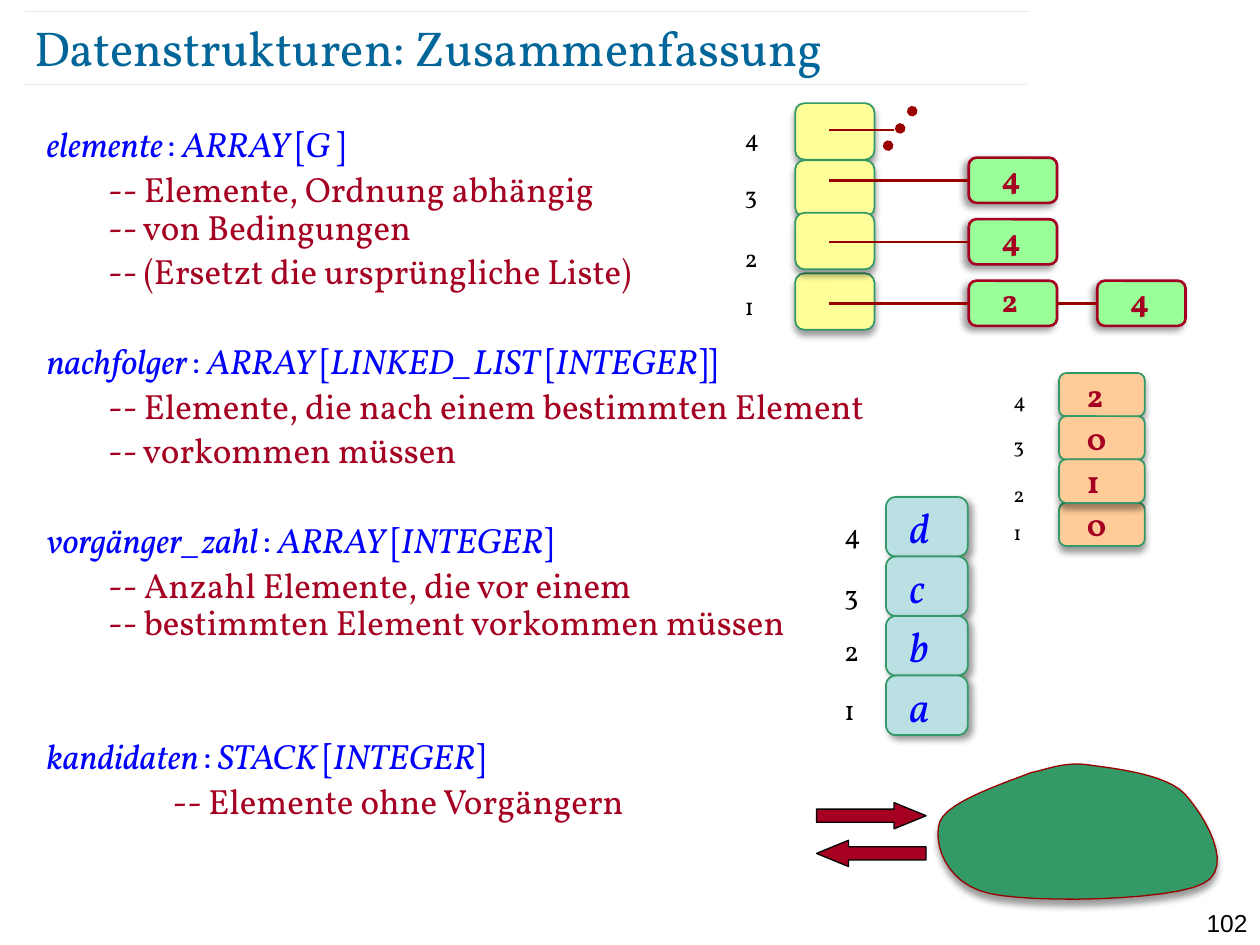
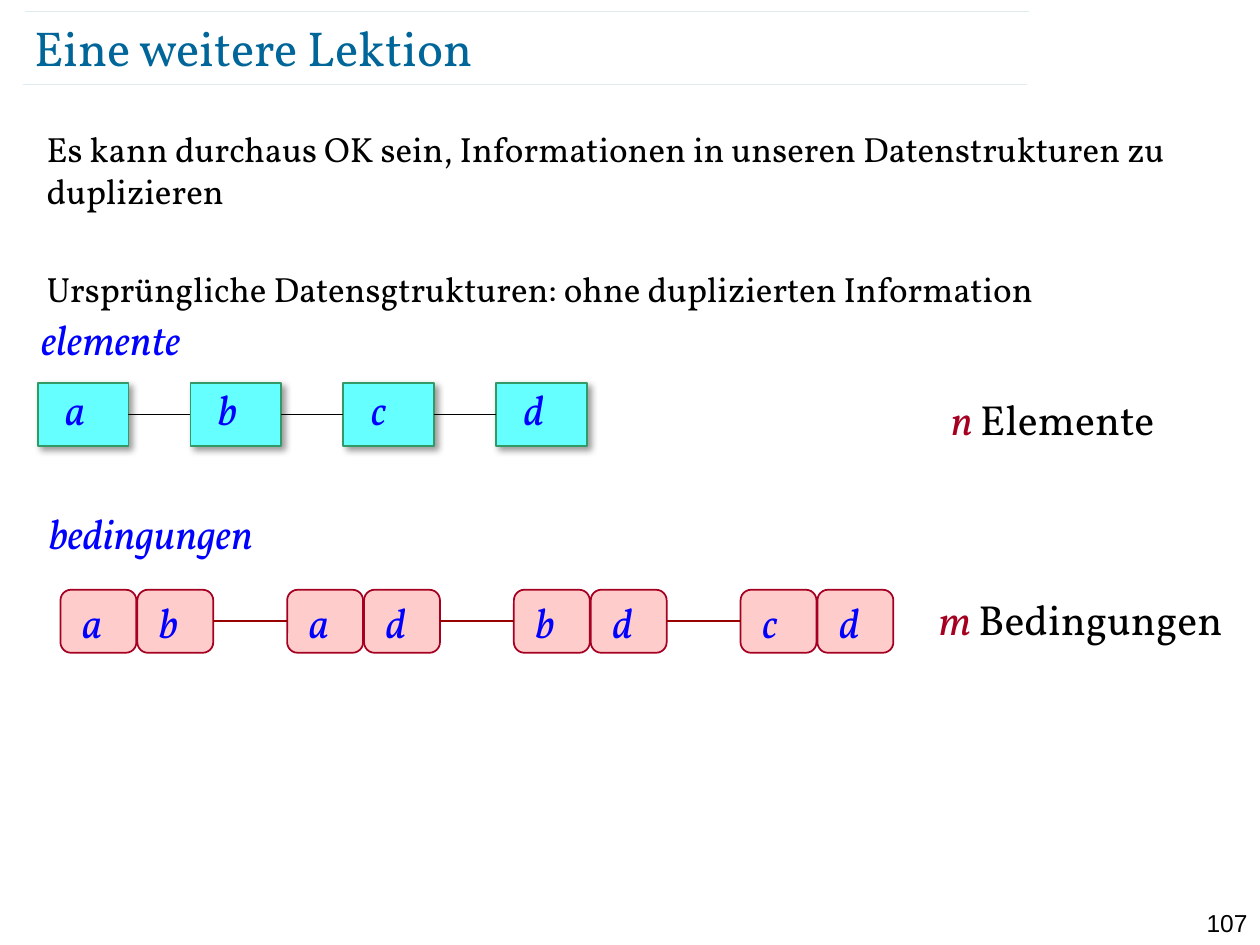
from itertools import groupby, pairwise

from lxml.etree import SubElement
from pptx import Presentation
from pptx.dml.color import RGBColor
from pptx.enum.dml import MSO_LINE
from pptx.enum.shapes import MSO_CONNECTOR, MSO_SHAPE
from pptx.enum.text import MSO_ANCHOR, MSO_AUTO_SIZE, PP_ALIGN
from pptx.oxml.ns import qn
from pptx.util import Cm, Pt

# Shared style
FONT = "Vollkorn"
BLACK, TEAL, BLUE, RED = "000000", "006699", "0000FF", "A50021"
DARK_RED, GREEN = "990000", "339966"
RULES = [(0.46, 1.7), (0.51, 0.23)]  # left, top
RULE_WIDTH = 20.24

# Slide 1: attribute name, type, indent of its comments, space before, comments
DECLARATIONS = [
    ("elemente", "ARRAY [G ]", 1.24, 0,
     [["-- Elemente, Ordnung abhängig", "-- von Bedingungen"],
      ["-- (Ersetzt die ursprüngliche Liste)"]]),
    ("nachfolger", "ARRAY [LINKED_LIST [INTEGER]]", 1.24, 29.5,
     [["-- Elemente, die nach einem bestimmten Element"],
      ["-- vorkommen müssen"]]),
    ("vorgänger_zahl", "ARRAY [INTEGER]", 1.24, 29.5,
     [["-- Anzahl Elemente, die vor einem",
       "-- bestimmten Element vorkommen müssen"]]),
    ("kandidaten", "STACK [INTEGER]", 2.54, 55,
     [["-- Elemente ohne Vorgängern"]]),
]

# Arrays, rows from back to front: index, value, cell top, index top
ARRAYS = [
    dict(left=16.03, size=(1.6, 1.14), fill="FFFF99", shadow=90,
         index_left=14.76, index_size=14, value_style={}, inset=0,
         rows=[("1", "", 5.51, 5.74), ("4", "", 2.08, 2.36),
               ("3", "", 3.23, 3.51), ("2", "", 4.29, 4.78)]),
    dict(left=21.35, size=(1.73, 0.88), fill="FFCC99", shadow=90,
         index_left=20.18, index_size=12, inset=0.52,
         value_style=dict(size=18, color=RED, bold=True),
         rows=[("1", "0", 10.13, 10.34), ("4", "2", 7.52, 7.68),
               ("3", "0", 8.39, 8.59), ("2", "1", 9.26, 9.58)]),
    dict(left=17.86, size=(1.65, 1.2), fill="BBE0E3", shadow=45,
         index_left=16.77, index_size=16, inset=0.42,
         value_style=dict(size=24, color=BLUE, italic=True),
         rows=[("4", "d", 10.02, 10.29), ("3", "c", 11.22, 11.51),
               ("2", "b", 12.42, 12.65), ("1", "a", 13.62, 13.84)]),
]

# Linked lists that hang on the first array: top, values
SUCCESSORS = [(3.18, ["4"]), (4.42, ["4"]), (5.66, ["2", "4"])]

# Candidate pool: start, then control, control and end point of each curve
POOL_START = (20.8, 15.57)
POOL_CURVES = [
    ((20.35, 15.75), (19.1, 16.15), (18.95, 16.56)),
    ((18.8, 16.97), (19.05, 17.81), (19.94, 18.01)),
    ((20.8, 18.21), (23.6, 18.16), (24.26, 17.81)),
    ((24.92, 17.48), (24.26, 16.41), (23.88, 16)),
    ((23.5, 15.6), (22.45, 15.49), (21.95, 15.42)),
    ((21.44, 15.34), (21.03, 15.54), (20.8, 15.57)),
]

# Slide 2
LESSON = [
    "Es kann durchaus OK sein, Informationen in unseren Datenstrukturen "
    "zu duplizieren",
    "Ursprüngliche Datensgtrukturen: ohne duplizierten Information",
]
ELEMENTS = "abcd"
CONSTRAINTS = ["ab", "ad", "bd", "cd"]
NAMES = [("elemente", 0.58, 6.2), ("bedingungen", 0.74, 10.11)]
COUNTS = [("n ", "Elemente", 18.92, 7.8), ("m ", "Bedingungen", 18.67, 11.84)]


def rgb(value):
    return RGBColor.from_string(value)


def add_span(para, text, size, color=BLACK, bold=False, italic=False, font=FONT):
    span = para.add_run()
    span.text = text
    span.font.name = font
    span.font.size = Pt(size)
    span.font.bold = bold
    span.font.italic = italic
    span.font.color.rgb = rgb(color)


def add_box(page, left, top, width, height):
    box = page.shapes.add_textbox(Cm(left), Cm(top), Cm(width), Cm(height))
    box.text_frame.word_wrap = True
    return box.text_frame


def next_para(frame, first):
    return frame.paragraphs[0] if first else frame.add_paragraph()


def add_effects(shape, shadow=None):
    """Leave the effect list empty, or cast a soft shadow in a direction."""
    properties = shape._element.spPr
    for old in properties.findall(qn("a:effectLst")):
        properties.remove(old)
    effects = SubElement(properties, qn("a:effectLst"))
    if shadow is not None:
        outer = SubElement(effects, qn("a:outerShdw"), blurRad=str(Pt(4)),
                           dist=str(Pt(3)), dir=str(shadow * 60000), algn="ctr",
                           rotWithShape="0")
        color = SubElement(outer, qn("a:srgbClr"), val=BLACK)
        SubElement(color, qn("a:alpha"), val="40000")


def paint(shape, fill, line, width, shadow=None):
    shape.fill.solid()
    shape.fill.fore_color.rgb = rgb(fill)
    shape.line.color.rgb = rgb(line)
    shape.line.width = Pt(width)
    add_effects(shape, shadow)


def add_cell(page, kind, place, fill, line, width=1, shadow=None,
             text="", inset=0, lift=0, **style):
    cell = page.shapes.add_shape(kind, *map(Cm, place))
    paint(cell, fill, line, width, shadow)
    if text:
        frame = cell.text_frame
        frame.word_wrap = True
        frame.vertical_anchor = MSO_ANCHOR.MIDDLE
        frame.margin_left, frame.margin_bottom = Cm(inset), Cm(lift)
        frame.margin_top = frame.margin_right = 0
        frame.paragraphs[0].alignment = PP_ALIGN.LEFT
        add_span(frame.paragraphs[0], text, **style)
    return cell


def add_line(page, start, end, color, width):
    line = page.shapes.add_connector(MSO_CONNECTOR.STRAIGHT,
                                     *map(Cm, start + end))
    line.line.color.rgb = rgb(color)
    line.line.width = Pt(width)
    add_effects(line)
    return line


def link(page, source, target, color, width):
    line = add_line(page, (0, 0), (1, 1), color, width)
    line.begin_connect(source, 3)
    line.end_connect(target, 1)


def add_page(deck, title, number):
    page = deck.slides.add_slide(deck.slide_layouts[5])
    for left, top in RULES:
        rule = add_line(page, (left, top), (left + RULE_WIDTH, top), TEAL, 0.1)
        color = rule._element.spPr.find(".//" + qn("a:srgbClr"))
        SubElement(color, qn("a:alpha"), val="35000")

    heading = page.shapes.title
    heading.left, heading.top = Cm(0.69), Cm(0.33)
    heading.width, heading.height = Cm(22.07), Cm(1.22)
    frame = heading.text_frame
    frame.auto_size = MSO_AUTO_SIZE.NONE
    frame.vertical_anchor = MSO_ANCHOR.MIDDLE
    frame.margin_left = frame.margin_right = 0
    frame.margin_top = frame.margin_bottom = 0
    frame.paragraphs[0].alignment = PP_ALIGN.LEFT
    add_span(frame.paragraphs[0], title, 28, TEAL)

    para = add_box(page, 24, 18.19, 1.4, 0.61).paragraphs[0]
    para.alignment = PP_ALIGN.RIGHT
    add_span(para, number, 14, font="Arial")
    return page


def add_body(page):
    return add_box(page, 0.69, 2.44, 23.88, 15.67)


def add_declarations(page):
    frame = add_body(page)
    for number, (name, kind, indent, before, comments) in enumerate(DECLARATIONS):
        para = next_para(frame, number == 0)
        para.line_spacing = 0.9
        para.space_before = Pt(before)
        add_span(para, name, 20, BLUE, italic=True)
        add_span(para, " ", 14, BLUE, italic=True)
        add_span(para, ":", 20, BLUE)
        for bracket, letters in groupby(" " + kind, lambda sign: sign in "[]"):
            add_span(para, "".join(letters), 20, BLUE, italic=not bracket)
        for lines in comments:
            para = frame.add_paragraph()
            para.line_spacing = 0.9
            para.space_before = Pt(4)
            para._p.get_or_add_pPr().set("marL", str(Cm(indent)))
            for position, text in enumerate(lines):
                if position:
                    para.add_line_break()
                add_span(para, text, 20, RED)


def add_array(page, array):
    for index, value, top, index_top in array["rows"]:
        add_cell(page, MSO_SHAPE.ROUNDED_RECTANGLE,
                 (array["left"], top, *array["size"]), array["fill"], GREEN,
                 shadow=array["shadow"], text=value, inset=array["inset"],
                 **array["value_style"])
        frame = add_box(page, array["index_left"], index_top, 1.2, 0.85)
        add_span(frame.paragraphs[0], index, array["index_size"])


def add_successors(page):
    start, left, pitch, width, height = 16.71, 19.53, 2.59, 1.78, 0.91
    for top, values in SUCCESSORS:
        cells = [add_cell(page, MSO_SHAPE.ROUNDED_RECTANGLE,
                          (left + pitch * column, top, width, height),
                          "99FF99", RED, 1.5, 135, value, 0.62, 0.12,
                          size=18, color=RED, bold=True)
                 for column, value in enumerate(values)]
        middle = top + height / 2
        line = add_line(page, (start, middle), (left, middle), DARK_RED, 1.5)
        line.end_connect(cells[0], 1)
        for source, target in pairwise(cells):
            link(page, source, target, DARK_RED, 1.5)
    # The list of the fourth element goes on
    add_line(page, (start, 2.62), (18.03, 2.62), DARK_RED, 1.5)
    dots = add_line(page, (18.39, 2.24), (17.81, 3.07), DARK_RED, 6)
    dots.line.dash_style = MSO_LINE.ROUND_DOT
    dots._element.spPr.find(qn("a:ln")).set("cap", "rnd")


def add_pool(page, steps=12):
    points, start = [], POOL_START
    for first, second, end in POOL_CURVES:
        for step in range(1, steps + 1):
            t = step / steps
            points.append(tuple(
                Cm((1 - t) ** 3 * a + 3 * (1 - t) ** 2 * t * b
                   + 3 * (1 - t) * t ** 2 * c + t ** 3 * d)
                for a, b, c, d in zip(start, first, second, end)))
        start = end
    builder = page.shapes.build_freeform(*map(Cm, POOL_START))
    builder.add_line_segments(points, close=True)
    paint(builder.convert_to_shape(), GREEN, DARK_RED, 0.75, 90)
    for kind, top in [(MSO_SHAPE.RIGHT_ARROW, 16.18), (MSO_SHAPE.LEFT_ARROW, 16.94)]:
        arrow = add_cell(page, kind, (16.46, top, 2.21, 0.53), RED, BLACK, 0.75)
        arrow.adjustments[1] = 1.22


def add_elements(page):
    cells = [add_cell(page, MSO_SHAPE.RECTANGLE,
                      (0.76 + 3.08 * column, 7.72, 1.83, 1.27),
                      "66FFFF", GREEN, 1, 45, letter, 0.56, 0.22,
                      size=24, color=BLUE, italic=True)
             for column, letter in enumerate(ELEMENTS)]
    for source, target in pairwise(cells):
        link(page, source, target, BLACK, 0.75)


def add_constraints(page):
    pairs = [[add_cell(page, MSO_SHAPE.ROUNDED_RECTANGLE,
                       (1.22 + 4.57 * column + 1.55 * half, 11.89, 1.53, 1.27),
                       "FFCCCC", RED, text=letter, inset=0.38,
                       size=24, color=BLUE, italic=True)
              for half, letter in enumerate(pair)]
             for column, pair in enumerate(CONSTRAINTS)]
    for source, target in pairwise(pairs):
        link(page, source[1], target[0], DARK_RED, 1)


def main():
    deck = Presentation()
    deck.slide_width, deck.slide_height = Cm(25.4), Cm(19.05)

    # Slide 1: the data structures
    page = add_page(deck, "Datenstrukturen: Zusammenfassung", "102")
    add_declarations(page)
    for array in ARRAYS:
        add_array(page, array)
    add_successors(page)
    add_pool(page)

    # Slide 2: structures without duplicated information
    page = add_page(deck, "Eine weitere Lektion", "107")
    frame = add_body(page)
    for number, text in enumerate(LESSON):
        para = next_para(frame, number == 0)
        para.space_before = Pt(32 * number)
        add_span(para, text, 20)
    add_elements(page)
    add_constraints(page)
    for name, left, top in NAMES:
        para = add_box(page, left, top, 5.56, 1.27).paragraphs[0]
        add_span(para, name, 24, BLUE, italic=True)
    for symbol, noun, left, top in COUNTS:
        para = add_box(page, left, top, 6.73, 1.27).paragraphs[0]
        add_span(para, symbol, 24, RED, italic=True)
        add_span(para, noun, 24)

    deck.save("out.pptx")


if __name__ == "__main__":
    main()
